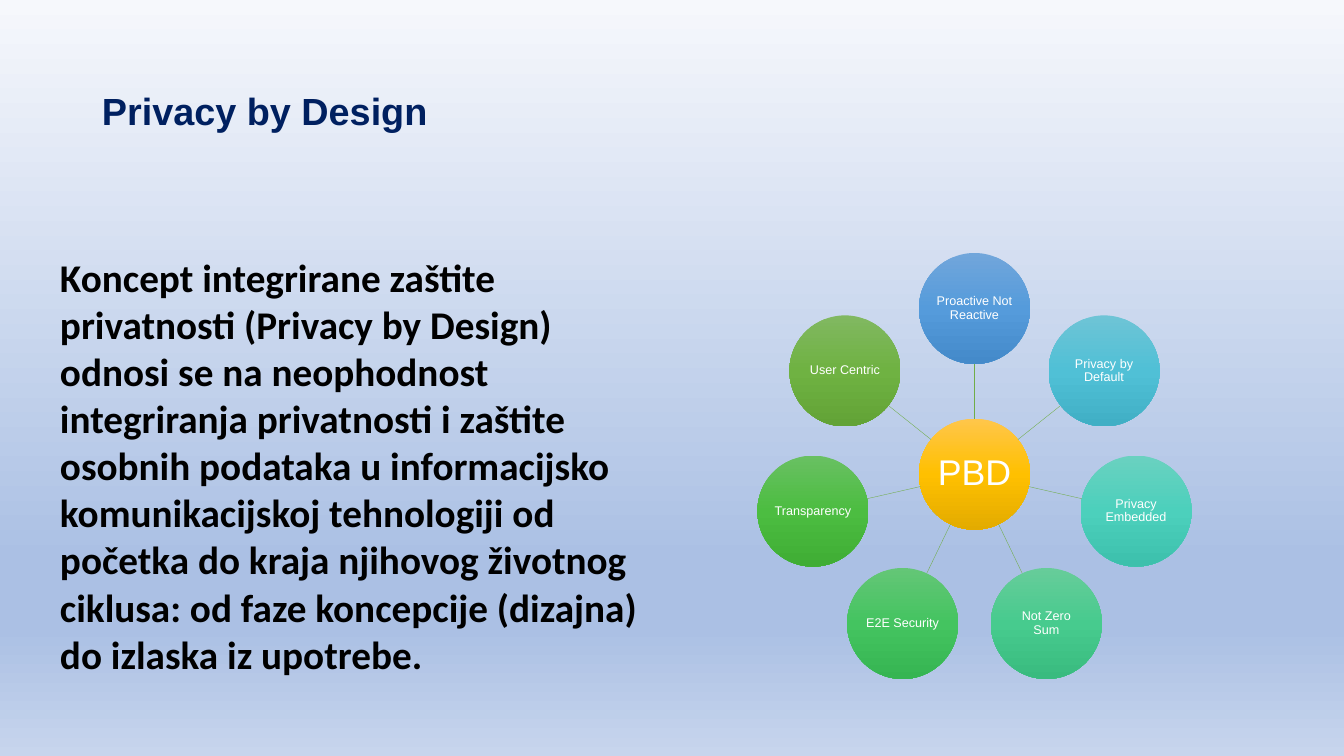
import math
from dataclasses import dataclass

from lxml import etree
from pptx import Presentation
from pptx import util as u
from pptx.dml.color import RGBColor
from pptx.enum import shapes, text
from pptx.oxml.ns import qn

PX = u.Inches(1) / 50.4


@dataclass(frozen=True)
class Theme:
    heading_font: str = "Arial"
    body_font: str = "Calibri"
    title_size: int = 54
    body_size: int = 56
    hub_size: int = 51
    principle_size: int = 18
    title: str = "002060"
    body: str = "000000"
    light: str = "FFFFFF"
    spoke: str = "70AD47"
    backdrop: tuple = ((0, "F6F8FC"), (74, "ABC0E4"), (83, "ABC0E4"), (100, "C7D5ED"))
    hub: tuple = ("FFC64B", "FFC000", "E3AB00")


THEME = Theme()
PRINCIPLES = [
    ("Proactive Not Reactive", ("71A6DB", "559BDB", "448ACA")),
    ("Privacy by Default", ("6EC4D6", "50C0D6", "40AFC5")),
    ("Privacy Embedded", ("6AD1C0", "4CD0BC", "3CC0AC")),
    ("Not Zero Sum", ("67CC9A", "47CB8E", "39BB7F")),
    ("E2E Security", ("64C677", "44C460", "36B552")),
    ("Transparency", ("69C062", "4CBD41", "3FAD34")),
    ("User Centric", ("81B861", "6FB242", "62A336")),
]
CONCEPT = (
    "Koncept integrirane zaštite privatnosti (Privacy by Design) odnosi se na "
    "neophodnost integriranja privatnosti i zaštite osobnih podataka u informacijsko "
    "komunikacijskoj tehnologiji od početka do kraja njihovog životnog ciklusa: "
    "od faze koncepcije (dizajna) do izlaska iz upotrebe."
)


def px(*lengths):
    return [u.Emu(round(length * PX)) for length in lengths]


def paint_gradient(fill, element, stops):
    fill.gradient()
    fill.gradient_angle = 270
    stop_list = element.find(".//" + qn("a:gsLst"))
    for old_stop in list(stop_list):
        stop_list.remove(old_stop)
    for percent, color in stops:
        stop = etree.SubElement(stop_list, qn("a:gs"), pos=str(percent * 1000))
        etree.SubElement(stop, qn("a:srgbClr"), val=color)


def write(holder, words, *, size, color, font, bold=False, spacing=1.0,
          align=text.PP_ALIGN.LEFT, anchor=text.MSO_ANCHOR.TOP, inset=(5, 2.5)):
    frame = holder.text_frame
    frame.word_wrap = True
    frame.vertical_anchor = anchor
    frame.margin_left, frame.margin_top = px(*inset)
    frame.margin_right, frame.margin_bottom = px(*inset)
    paragraph = frame.paragraphs[0]
    paragraph.alignment = align
    paragraph.line_spacing = spacing
    run = paragraph.add_run()
    run.text = words
    run.font.name = font
    run.font.size = u.Pt(size)
    run.font.bold = bold
    run.font.color.rgb = RGBColor.from_string(color)


def add_title(slide, box):
    title = slide.shapes.add_textbox(*px(*box))
    write(title, "Privacy by Design", size=THEME.title_size, color=THEME.title,
          font=THEME.heading_font, bold=True, spacing=0.9,
          anchor=text.MSO_ANCHOR.MIDDLE, inset=(10, 5))


def add_concept(slide, box):
    concept = slide.shapes.add_textbox(*px(*box))
    write(concept, CONCEPT, size=THEME.body_size, color=THEME.body,
          font=THEME.body_font, bold=True)


def add_circle(slide, center, diameter, words, colors, size, inset):
    x, y = center
    circle = slide.shapes.add_shape(
        shapes.MSO_SHAPE.OVAL,
        *px(x - diameter / 2, y - diameter / 2, diameter, diameter))
    circle.shadow.inherit = False
    paint_gradient(circle.fill, circle.element, zip((0, 50, 100), colors))
    circle.line.fill.background()
    write(circle, words, size=size, color=THEME.light, font=THEME.heading_font,
          spacing=0.9, align=text.PP_ALIGN.CENTER,
          anchor=text.MSO_ANCHOR.MIDDLE, inset=(inset, inset))


def add_spoke(slide, start, end):
    spoke = slide.shapes.add_connector(
        shapes.MSO_CONNECTOR.STRAIGHT, *px(*start, *end))
    spoke.line.color.rgb = RGBColor.from_string(THEME.spoke)
    spoke.line.width = u.Pt(0.5)
    etree.SubElement(spoke.element.spPr, qn("a:effectLst"))


def add_principle_wheel(slide, box, diameter):
    left, top, width, height = box
    step = 2 * math.pi / len(PRINCIPLES)
    orbit = (height - diameter) / (1 + math.cos(step / 2))
    hub_x, hub_y = left + width / 2, top + diameter / 2 + orbit

    def on_ray(angle, distance):
        return hub_x + distance * math.sin(angle), hub_y - distance * math.cos(angle)

    add_circle(slide, (hub_x, hub_y), diameter, "PBD", THEME.hub, THEME.hub_size, 2)
    for index, (principle, colors) in enumerate(PRINCIPLES):
        angle = index * step
        add_spoke(slide, on_ray(angle, diameter / 2), on_ray(angle, orbit - diameter / 2))
        add_circle(slide, on_ray(angle, orbit), diameter, principle, colors,
                   THEME.principle_size, 0.5)


def main():
    deck = Presentation()
    deck.slide_width, deck.slide_height = px(1344, 756)
    slide = deck.slides.add_slide(deck.slide_layouts[6])
    paint_gradient(slide.background.fill, slide.element, THEME.backdrop)
    add_title(slide, (92, 40, 1159, 146))
    add_concept(slide, (55, 251, 595, 432))
    add_principle_wheel(slide, (757, 253, 435, 426), diameter=111)
    deck.save("out.pptx")


if __name__ == "__main__":
    main()
